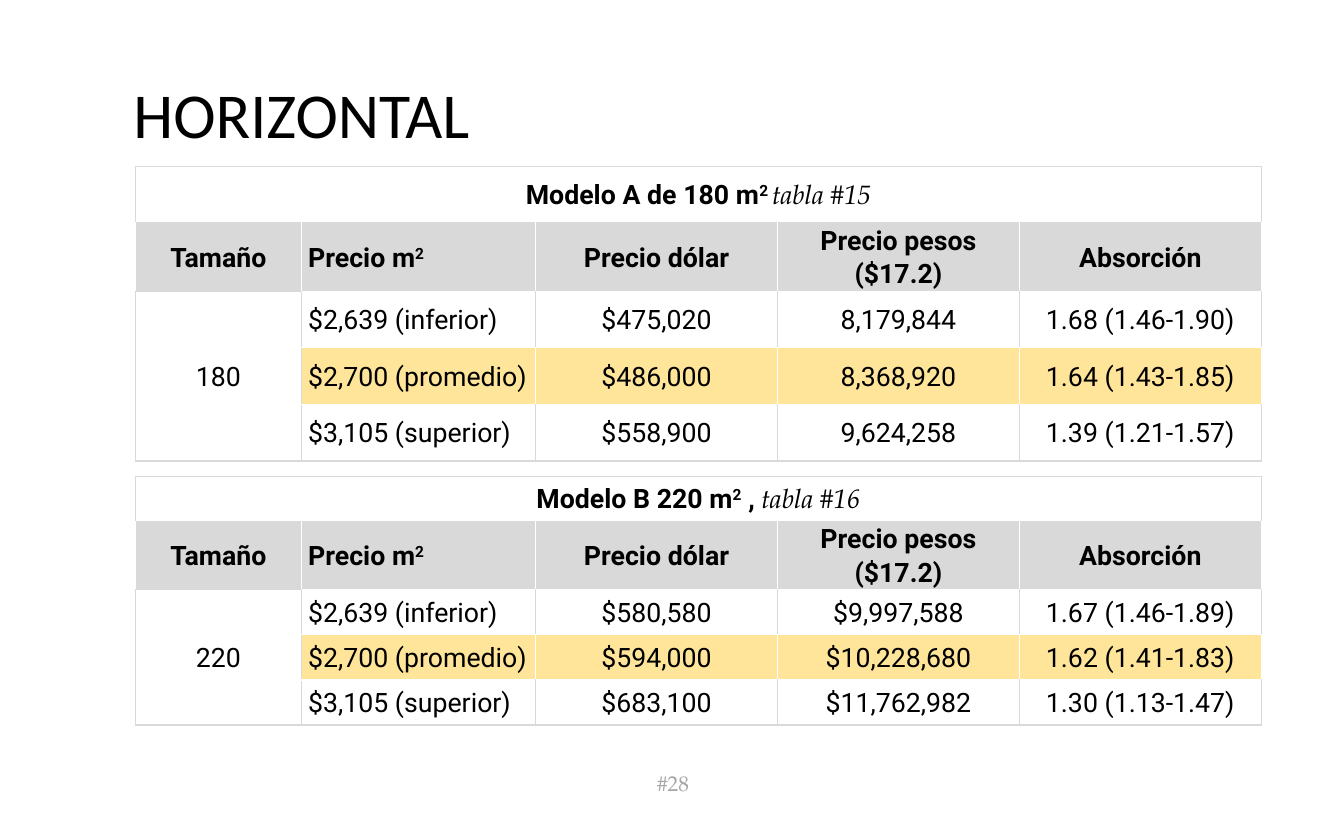
from lxml.etree import SubElement
from pptx import Presentation
from pptx.dml.color import RGBColor
from pptx.enum.text import MSO_ANCHOR as ANCHOR, MSO_AUTO_SIZE as AUTO, PP_ALIGN as ALIGN
from pptx.oxml.ns import qn
from pptx.util import Inches, Pt

C = {"black": "000000", "white": "FFFFFF", "grey": "D9D9D9",
     "yellow": "FFE599", "number": "A6A6A6"}
SANS, SERIF, HEAD = "Roboto", "TeX Gyre Pagella", "Calibri"

HEADER = [[("Tamaño", "b")], [("Precio m", "b"), ("2", "b^")], [("Precio dólar", "b")],
          [("Precio pesos ($17.2)", "b")], [("Absorción", "b")]]
LEVELS = ["$2,639 (inferior)", "$2,700 (promedio)", "$3,105 (superior)"]
COLS = [1.73, 2.44, 2.52, 2.52, 2.52]
LEFT = 1.41
MODELS = [
    {"top": 1.73, "row": 0.59, "size": "180",
     "title": [("Modelo A de 180 m", "b"), ("2 ", "b^"), ("tabla #15", "i")],
     "data": [("$475,020", "8,179,844", "1.68 (1.46-1.90)"),
              ("$486,000", "8,368,920", "1.64 (1.43-1.85)"),
              ("$558,900", "9,624,258", "1.39 (1.21-1.57)")]},
    {"top": 4.96, "row": 0.47, "size": "220",
     "title": [("Modelo B 220 m", "b"), ("2", "b^"), (" , ", "b"), ("tabla #16", "i")],
     "data": [("$580,580", "$9,997,588", "1.67 (1.46-1.89)"),
              ("$594,000", "$10,228,680", "1.62 (1.41-1.83)"),
              ("$683,100", "$11,762,982", "1.30 (1.13-1.47)")]},
]


def add_run(p, text, size, font, color, style=""):
    r = p.add_run()
    r.text = text
    r.font.size, r.font.name = Pt(size), font
    r.font.color.rgb = RGBColor.from_string(C[color])
    r.font.bold, r.font.italic = "b" in style, "i" in style
    if "^" in style:
        r._r.get_or_add_rPr().set("baseline", "30000")


def set_margins(o, left, top, right, bottom):
    o.margin_left, o.margin_top = Inches(left), Inches(top)
    o.margin_right, o.margin_bottom = Inches(right), Inches(bottom)


def set_borders(cell, colors):
    tcPr = cell._tc.get_or_add_tcPr()
    for i, (side, color) in enumerate(zip("LRTB", colors)):
        ln = SubElement(tcPr, qn(f"a:ln{side}"), w=str(Pt(1)))
        fill = SubElement(ln, qn("a:solidFill"))
        SubElement(fill, qn("a:srgbClr"), val=C[color])
        tcPr.insert(i, ln)


def border_colors(row, col):
    g, w = "grey", "white"
    if row == 0 or (row > 1 and col == 0):
        return g, g, g, g
    if row == 1:
        return w, w, g, g if col == 0 else w
    if row == 3:
        return g if col == 1 else w, w, w, w
    return g, g, w, g if row == 4 else w


def fill_cell(cell, runs, row, col):
    set_margins(cell, 0.07, 0, 0.07, 0)
    cell.vertical_anchor = ANCHOR.MIDDLE
    fill = "grey" if row == 1 else "yellow" if row == 3 and col else None
    if fill:
        cell.fill.solid()
        cell.fill.fore_color.rgb = RGBColor.from_string(C[fill])
    else:
        cell.fill.background()
    set_borders(cell, border_colors(row, col))
    p = cell.text_frame.paragraphs[0]
    p.alignment = ALIGN.LEFT if col == 1 and row else ALIGN.CENTER
    p.line_spacing, p.space_after = 1.07, Pt(8)
    for text, style in runs:
        add_run(p, text, 20, SERIF if "i" in style else SANS, "black", style)


def add_model(s, model):
    body = [[[(t, "")] if t else [] for t in (size, level, *values)]
            for size, level, values in zip((model["size"], "", ""), LEVELS, model["data"])]
    rows = [[model["title"], [], [], [], []], HEADER, *body]
    table = s.shapes.add_table(len(rows), len(COLS), Inches(LEFT), Inches(model["top"]),
                               Inches(sum(COLS)), Inches(model["row"] * len(rows))).table
    table.first_row = table.horz_banding = False
    for column, width in zip(table.columns, COLS):
        column.width = Inches(width)
    for i, row in enumerate(rows):
        table.rows[i].height = Inches(model["row"])
        for j, runs in enumerate(row):
            fill_cell(table.cell(i, j), runs, i, j)
    table.cell(0, 0).merge(table.cell(0, 4))
    table.cell(2, 0).merge(table.cell(4, 0))


prs = Presentation()
prs.slide_width, prs.slide_height = Inches(14), Inches(8.5)
s = prs.slides.add_slide(prs.slide_layouts[5])

title = s.shapes.title
title.left, title.top, title.width, title.height = map(Inches, (1.25, 0.86, 11.18, 0.78))
tf = title.text_frame
tf.word_wrap, tf.auto_size, tf.vertical_anchor = True, AUTO.SHAPE_TO_FIT_TEXT, ANCHOR.TOP
set_margins(tf, 0.14, 0.07, 0.14, 0.07)
p = tf.paragraphs[0]
p.alignment, p.line_spacing = ALIGN.LEFT, 0.8
add_run(p, "HORIZONTAL", 48, HEAD, "black")

for model in MODELS:
    add_model(s, model)

sp = s.shapes.add_textbox(*map(Inches, (6.51, 8.04, 0.98, 0.26)))
tf = sp.text_frame
tf.word_wrap, tf.vertical_anchor = True, ANCHOR.MIDDLE
set_margins(tf, 0.12, 0.02, 0.1, 0.05)
p = tf.paragraphs[0]
p.alignment = ALIGN.CENTER
add_run(p, "#28", 16, SERIF, "number")

prs.save("out.pptx")
